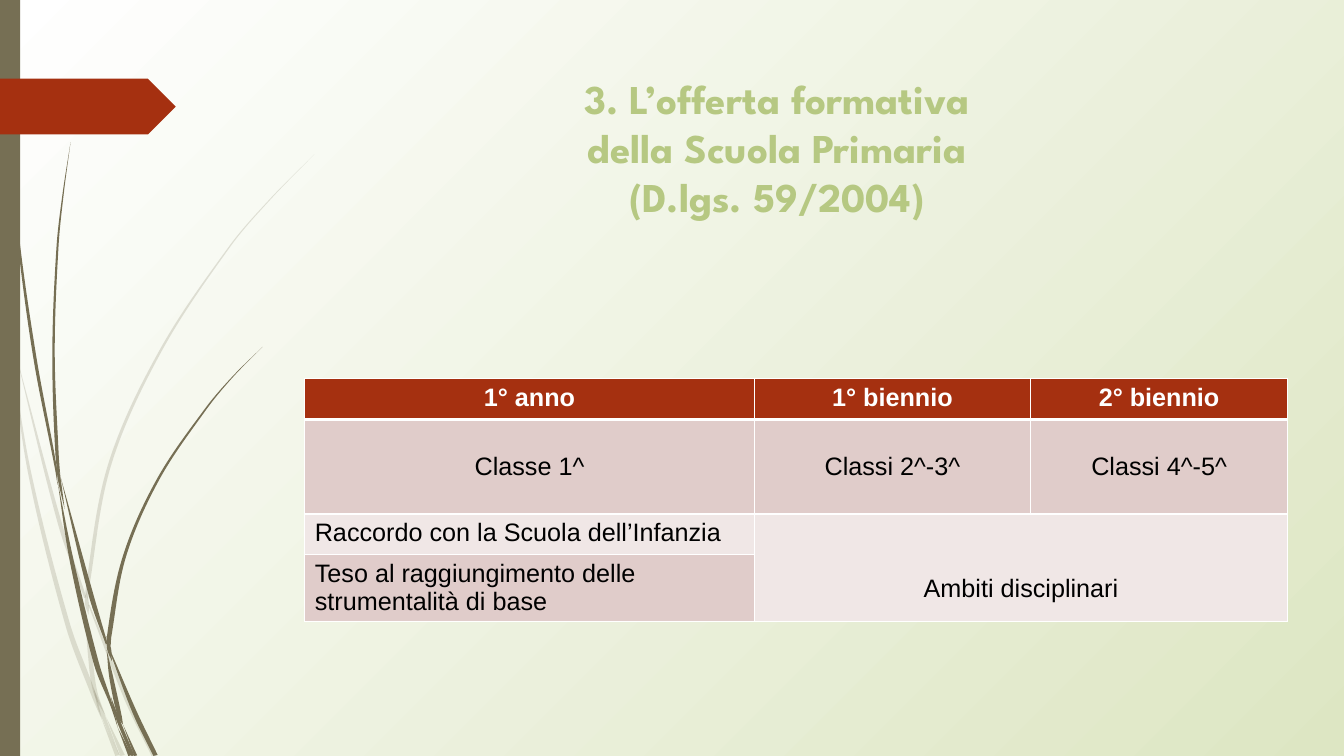
from math import hypot

from lxml import etree
from pptx import Presentation
from pptx.dml.color import RGBColor
from pptx.enum.shapes import MSO_SHAPE
from pptx.enum.text import MSO_ANCHOR, PP_ALIGN
from pptx.oxml.ns import qn
from pptx.util import Cm, Pt

RECT, TAG = MSO_SHAPE.RECTANGLE, MSO_SHAPE.PENTAGON
CENTER, LEFT = PP_ALIGN.CENTER, PP_ALIGN.LEFT
TOP, MIDDLE = MSO_ANCHOR.TOP, MSO_ANCHOR.MIDDLE

WHITE = RGBColor(0xFF, 0xFF, 0xFF)
BLACK = RGBColor(0x00, 0x00, 0x00)
GREEN = RGBColor(0xDD, 0xE6, 0xC3)
OLIVE = RGBColor(0xB6, 0xC8, 0x82)
BROWN = RGBColor(0x76, 0x6F, 0x54)
RED = RGBColor(0xA5, 0x30, 0x10)
ROSE = RGBColor(0xE0, 0xCC, 0xCA)
PALE = RGBColor(0xF0, 0xE7, 0xE6)

HIGH = 19.05

# Stretches of grass, from tip to foot: x, y and width of the blade, in cm
LIGHT = [
    [(0, 7.38, 0.1), (0.24, 8.46, 0.03), (0.28, 8.89, 0)],
    [(0.36, 8.76, 0), (1.52, 13.23, 0.1), (2.15, 15.06, 0.06)],
    [(2.24, 15.24, 0.03), (3.18, 17.6, 0.1), (3.87, HIGH, 0.11)],
    [(2.67, 18.06, 0), (3.09, HIGH, 0.12)],
    [(0.28, 8.89, 0), (0.75, 11.93, 0.08), (1.71, 15.75, 0.12),
     (2.35, 17.48, 0.12), (2.57, 18.14, 0)],
    [(2.13, 15.21, 0), (2.26, 16.41, 0.1), (2.4, 17.43, 0.1),
     (2.67, 18.06, 0)],
    [(7.92, 3.89, 0), (6.81, 5.02, 0.02), (5.79, 6.21, 0.03),
     (4.04, 8.85, 0.06), (2.76, 11.72, 0.08), (2.2, 14.84, 0.08),
     (2.22, 15.14, 0)],
    [(2.57, 18.14, 0), (2.96, HIGH, 0.12)],
    [(2.16, 14.88, 0), (2.19, 15.2, 0.1), (2.23, 15.49, 0)],
    [(2.36, 17.35, 0), (2.53, 17.87, 0.1), (3.02, HIGH, 0)],
]
DARK = [
    [(0.09, 0, 0.02), (0.11, 1.22, 0.03), (0.19, 2.78, 0.04),
     (0.45, 5.91, 0.05), (0.88, 9.02, 0.08), (1.41, 11.81, 0.05),
     (1.45, 12.22, 0)],
    [(1.52, 11.99, 0), (2.3, 15.01, 0.12), (2.69, 16.23, 0.05)],
    [(2.8, 16.47, 0.03), (3.4, 17.96, 0.11), (3.92, HIGH, 0.12)],
    [(1.45, 12.12, 0), (1.81, 14.14, 0.1), (2.43, 16.72, 0.13),
     (2.81, 17.77, 0.06), (2.97, 18.34, 0)],
    [(1.78, 3.58, 0), (1.59, 4.9, 0.03), (1.45, 6.22, 0.05),
     (1.35, 8.86, 0.06), (1.44, 11.46, 0.08), (1.52, 11.99, 0)],
    [(3.1, 18.26, 0), (3.42, HIGH, 0.08)],
    [(1.4, 11.4, 0), (1.49, 12.05, 0.07), (1.63, 12.83, 0)],
    [(6.62, 8.74, 0), (5.87, 9.49, 0.02), (5.19, 10.3, 0.04),
     (3.99, 12.07, 0.06), (3.14, 14.01, 0.08), (2.75, 16.05, 0.11),
     (2.79, 16.28, 0)],
    [(2.97, 18.34, 0), (3.28, HIGH, 0.1)],
    [(2.69, 16.38, 0), (2.81, 17.1, 0.1), (3.02, 18.06, 0.1),
     (3.1, 18.26, 0)],
    [(2.69, 16.03, 0), (2.75, 16.35, 0.1), (2.82, 16.66, 0)],
    [(2.79, 17.55, 0), (2.96, 18.1, 0.08), (3.35, HIGH, 0.08)],
]

COLS = [11.33, 6.96, 6.48]
ROWS = [1.04, 2.38, 1.02, 1.7]
HEADS = ["1° anno", "1° biennio", "2° biennio"]
YEARS = ["Classe 1^", "Classi 2^-3^", "Classi 4^-5^"]
GOALS = ["Raccordo con la Scuola dell’Infanzia",
         "Teso al raggiungimento delle strumentalità di base"]


def paint(shape, color, alpha=None):
    shape.shadow.inherit = False
    shape.fill.solid()
    shape.fill.fore_color.rgb = color
    shape.line.fill.background()
    if alpha:
        tint = shape.fill._xPr.find(".//" + qn("a:srgbClr"))
        etree.SubElement(tint, qn("a:alpha")).set("val", str(alpha * 1000))


def add_back(slide):
    fill = slide.background.fill
    fill.gradient()
    for stop, color in zip(fill.gradient_stops, (WHITE, GREEN)):
        stop.color.rgb = color
    # Radial spread from the top left corner
    grad = slide.background._cSld.find(".//" + qn("a:gradFill"))
    grad.remove(grad.find(qn("a:lin")))
    ring = etree.SubElement(grad, qn("a:path"))
    ring.set("path", "circle")
    rect = etree.SubElement(ring, qn("a:fillToRect"))
    rect.set("r", "100000")
    rect.set("b", "100000")


def slopes(dots):
    """Unit direction of the line at each point."""
    for (x0, y0), (x1, y1) in zip(dots[:1] + dots, dots[1:] + dots[-1:]):
        size = hypot(x1 - x0, y1 - y0)
        yield (x1 - x0) / size, (y1 - y0) / size


def curve(dots):
    """Two controls and an end point for each Bezier arc."""
    ways = list(slopes(dots))
    out = []
    for (x0, y0), (x1, y1), (u0, v0), (u1, v1) in zip(
            dots, dots[1:], ways, ways[1:]):
        arm = hypot(x1 - x0, y1 - y0) / 3
        out += [(x0 + u0 * arm, y0 + v0 * arm),
                (x1 - u1 * arm, y1 - v1 * arm), (x1, y1)]
    return out


def add_blade(slide, knots, alpha=None):
    ways = list(slopes([knot[:2] for knot in knots]))
    left, right = (
        [(x + side * v * w / 2, min(y - side * u * w / 2, HIGH))
         for (x, y, w), (u, v) in zip(knots, ways)] for side in (1, -1))
    right.reverse()
    edge = [left[0], *curve(left), *[right[0]] * 3, *curve(right)]
    dots = [(1000 * x, 1000 * y) for x, y in edge]
    pen = slide.shapes.build_freeform(*dots[0], scale=Cm(0.001))
    pen.add_line_segments(dots[1:], close=True)
    shape = pen.convert_to_shape()
    # Each three points make one Bezier arc
    lines = list(shape._element.iter(qn("a:lnTo")))
    for i in range(0, len(edge) - 1, 3):
        arc = etree.Element(qn("a:cubicBezTo"))
        lines[i].addprevious(arc)
        for line in lines[i:i + 3]:
            arc.append(line[0])
            line.getparent().remove(line)
    paint(shape, BROWN, alpha)


def add_block(slide, kind, box, color):
    shape = slide.shapes.add_shape(kind, *map(Cm, box))
    paint(shape, color)


def add_title(slide, text):
    frame = slide.shapes.add_textbox(
        Cm(7.2), Cm(1.73), Cm(24.76), Cm(5.08)).text_frame
    frame.word_wrap = True
    frame.vertical_anchor = TOP
    frame.text = text
    style(frame.paragraphs[0], CENTER, "League Spartan", 29.2, OLIVE, True)


def style(para, align, name, size, color, bold):
    para.alignment = align
    font = para.font
    font.name, font.size, font.bold = name, Pt(size), bold
    font.color.rgb = color


def add_edges(cell, foot):
    props = cell._tc.get_or_add_tcPr()
    for side, width in zip("LRTB", (1, 1, 1, foot)):
        line = etree.SubElement(props, qn("a:ln" + side))
        line.set("w", str(Pt(width)))
        solid = etree.SubElement(line, qn("a:solidFill"))
        etree.SubElement(solid, qn("a:srgbClr")).set("val", str(WHITE))


def fill_cell(cell, text, align, anchor, color=BLACK, bold=False):
    cell.text = text
    cell.vertical_anchor = anchor
    style(cell.text_frame.paragraphs[0], align, "Arial", 18, color, bold)


def add_grid(slide):
    grid = slide.shapes.add_table(
        len(ROWS), len(COLS), Cm(7.68), Cm(9.53),
        Cm(sum(COLS)), Cm(sum(ROWS))).table
    for col, width in zip(grid.columns, COLS):
        col.width = Cm(width)
    for row, height in zip(grid.rows, ROWS):
        row.height = Cm(height)
    for r, tint in enumerate((RED, ROSE, PALE, ROSE)):
        for c in range(len(COLS)):
            cell = grid.cell(r, c)
            add_edges(cell, 1 if r else 3)
            cell.fill.solid()
            cell.fill.fore_color.rgb = tint

    for c, (head, year) in enumerate(zip(HEADS, YEARS)):
        fill_cell(grid.cell(0, c), head, CENTER, TOP, WHITE, True)
        fill_cell(grid.cell(1, c), year, CENTER, MIDDLE)
    for r, goal in enumerate(GOALS, 2):
        fill_cell(grid.cell(r, 0), goal, LEFT, TOP)

    areas = grid.cell(2, 1)
    areas.merge(grid.cell(3, 2))
    fill_cell(areas, "Ambiti disciplinari", CENTER, TOP)
    areas.margin_top = Cm(1.53)


def main():
    deck = Presentation()
    deck.slide_width, deck.slide_height = Cm(33.87), Cm(HIGH)
    slide = deck.slides.add_slide(deck.slide_layouts[6])

    # Backdrop and grass
    add_back(slide)
    for blades, alpha in ((LIGHT, 20), (DARK, None)):
        for knots in blades:
            add_blade(slide, knots, alpha)

    # Side bar and tag
    add_block(slide, RECT, (0, 0, 0.51, HIGH), BROWN)
    add_block(slide, TAG, (0, 1.98, 4.43, 1.41), RED)

    # Content
    add_grid(slide)
    add_title(slide, "3. L’offerta formativa\vdella Scuola Primaria\v"
                     "(D.lgs. 59/2004)")
    deck.save("out.pptx")


if __name__ == "__main__":
    main()
